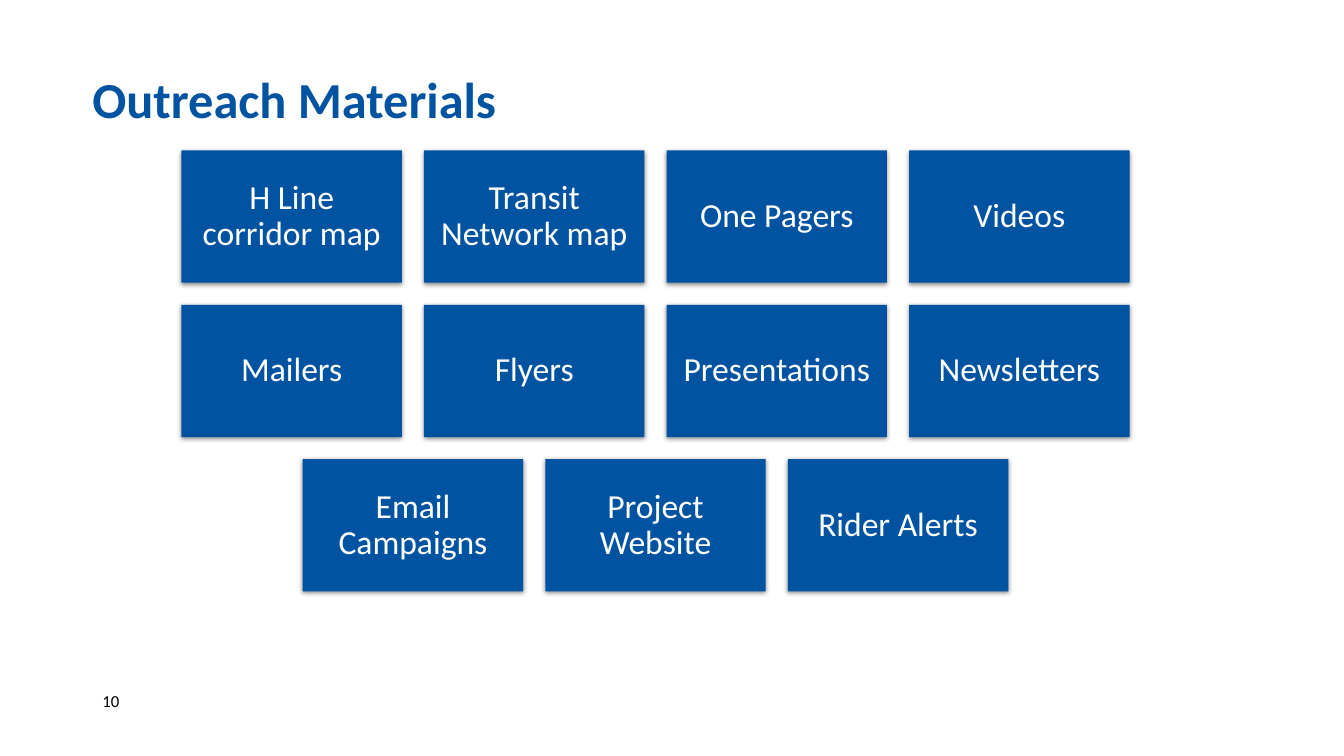
import pptx
import pptx.dml.color
import pptx.enum.shapes
import pptx.enum.text
import pptx.oxml
import pptx.oxml.ns
import pptx.util

Pt = pptx.util.Pt
ANCHOR = pptx.enum.text.MSO_ANCHOR
ALIGN = pptx.enum.text.PP_ALIGN

COLORS = {"blue": "0053A0", "white": "FFFFFF", "black": "000000"}
FONT = "Calibri"

MATERIAL_ROWS = [
    ["H Line corridor map", "Transit Network map", "One Pagers", "Videos"],
    ["Mailers", "Flyers", "Presentations", "Newsletters"],
    ["Email Campaigns", "Project Website", "Rider Alerts"],
]
TILE_WIDTH, TILE_HEIGHT, TILE_GAP = 157.5, 94.5, 15.75
GRID_CENTER, GRID_TOP = 468.25, 107.5


def rgb(name):
    return pptx.dml.color.RGBColor.from_string(COLORS[name])


def write_text(box, text, size, color, anchor, insets, align=ALIGN.LEFT, bold=False, spacing=0.9):
    """Fill a shape with one paragraph; insets are left, top, right, bottom."""
    frame = box.text_frame
    frame.word_wrap = True
    frame.vertical_anchor = anchor
    frame.margin_left, frame.margin_top, frame.margin_right, frame.margin_bottom = map(Pt, insets)
    para = frame.paragraphs[0]
    para.text = text
    para.alignment = align
    para.line_spacing = spacing
    para.font.name = FONT
    para.font.size = Pt(size)
    para.font.bold = bold
    para.font.color.rgb = rgb(color)


def add_text(page, left, top, width, height, *text_options, **more_options):
    box = page.shapes.add_textbox(Pt(left), Pt(top), Pt(width), Pt(height))
    write_text(box, *text_options, **more_options)


def add_soft_shadow(shape):
    """Give the shape a faint shadow straight below it."""
    shape.shadow.inherit = False
    effects = shape._element.spPr.find(pptx.oxml.ns.qn("a:effectLst"))
    effects.append(pptx.oxml.parse_xml(
        f'<a:outerShdw {pptx.oxml.ns.nsdecls("a")} blurRad="{Pt(3.5)}" dist="{Pt(1.1)}" '
        f'dir="5400000" algn="ctr" rotWithShape="0"><a:srgbClr val="{COLORS["black"]}">'
        '<a:alpha val="45000"/></a:srgbClr></a:outerShdw>'))


def add_tile(page, left, top, label):
    tile = page.shapes.add_shape(
        pptx.enum.shapes.MSO_SHAPE.RECTANGLE,
        Pt(left), Pt(top), Pt(TILE_WIDTH), Pt(TILE_HEIGHT))
    tile.fill.solid()
    tile.fill.fore_color.rgb = rgb("blue")
    tile.line.fill.background()
    add_soft_shadow(tile)
    write_text(tile, label, 24, "white", ANCHOR.MIDDLE, (7.2, 7.2, 7.2, 7.2), align=ALIGN.CENTER)


def add_tile_grid(page):
    """Place the rows of tiles, each row centred on the same axis."""
    for row, labels in enumerate(MATERIAL_ROWS):
        row_width = len(labels) * (TILE_WIDTH + TILE_GAP) - TILE_GAP
        row_left = GRID_CENTER - row_width / 2
        top = GRID_TOP + row * (TILE_HEIGHT + TILE_GAP)
        for column, label in enumerate(labels):
            add_tile(page, row_left + column * (TILE_WIDTH + TILE_GAP), top, label)


def main():
    deck = pptx.Presentation()
    deck.slide_width, deck.slide_height = Pt(960), Pt(540)
    page = deck.slides.add_slide(deck.slide_layouts[6])
    add_text(page, 66, 0, 828, 96, "Outreach Materials", 36, "blue",
             ANCHOR.BOTTOM, (0, 28.8, 0, 3.6), bold=True)
    add_text(page, 66, 486, 115, 29, "10", 12, "black",
             ANCHOR.MIDDLE, (7.2, 3.6, 0, 3.6), spacing=1.0)
    add_tile_grid(page)
    deck.save("out.pptx")


if __name__ == "__main__":
    main()
